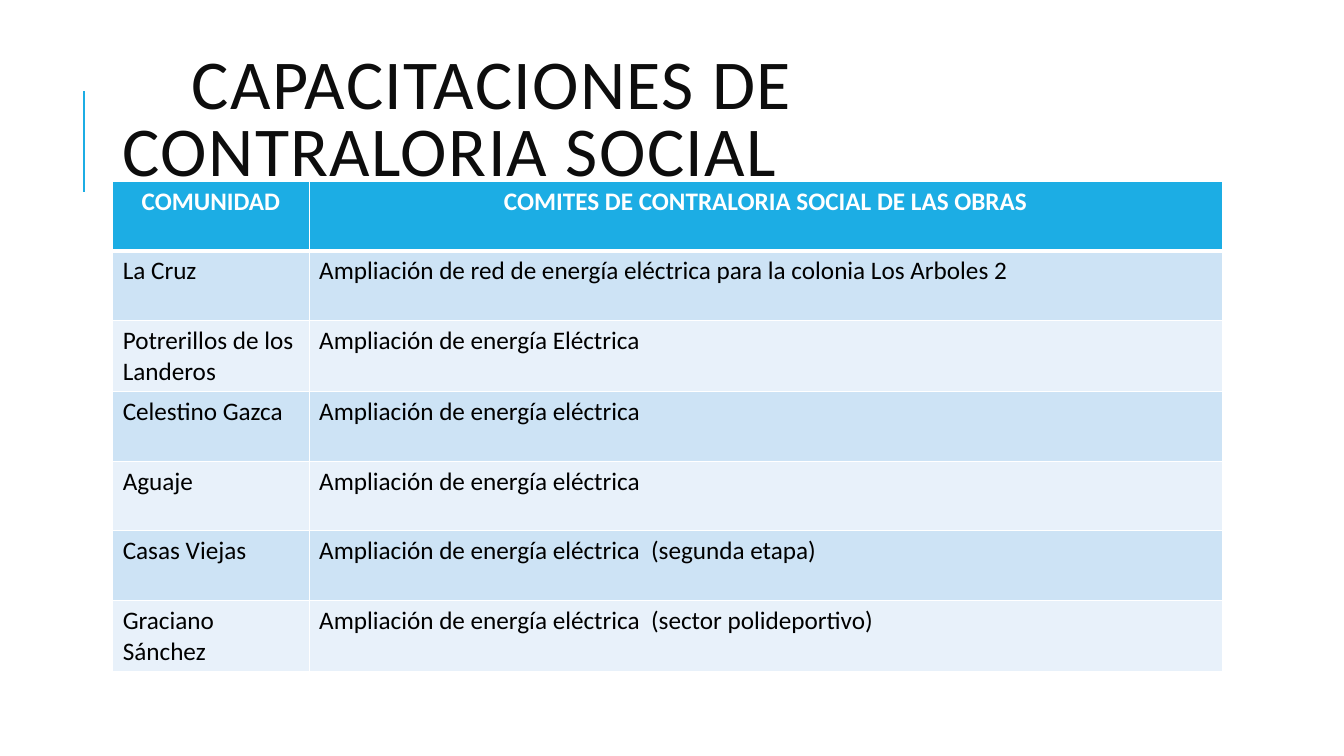
from lxml import etree
from pptx import Presentation, util as u
from pptx.dml.color import RGBColor
from pptx.enum import text
from pptx.oxml import ns

HUES = {"accent": "1CADE4", "title": "0D0D0D", "text": "000000",
        "white": "FFFFFF", "odd": "CDE3F5", "even": "E8F1FA"}
ALIGN = text.PP_ALIGN
HEAD = ["COMUNIDAD", "COMITES DE CONTRALORIA SOCIAL DE LAS OBRAS"]
WORK = "Ampliación de energía eléctrica"
ROWS = [
    ["La Cruz", "Ampliación de red de energía eléctrica para la colonia Los Arboles 2"],
    ["Potrerillos de los Landeros", "Ampliación de energía Eléctrica"],
    ["Celestino Gazca", WORK],
    ["Aguaje", WORK],
    ["Casas Viejas", WORK + "  (segunda etapa)"],
    ["Graciano Sánchez", WORK + "  (sector polideportivo)"],
]


def hue(name):
    return RGBColor.from_string(HUES[name])


class Deck:
    def __init__(self, wide, high):
        self.prs = Presentation()
        self.prs.slide_width, self.prs.slide_height = u.Cm(wide), u.Cm(high)
        self.face = "Calibri"

    def add(self):
        self.slide = self.prs.slides.add_slide(self.prs.slide_layouts[5])

    def label(self, para, words, color, **form):
        para.text = words
        font = para.runs[0].font
        for key, val in {"name": self.face, **form}.items():
            setattr(font, key, val)
        font.color.rgb = hue(color)

    def title(self, words, left, top, wide, high, indent):
        box = self.slide.shapes.title
        spot = {"left": left, "top": top, "width": wide, "height": high}
        for key, val in spot.items():
            setattr(box, key, u.Cm(val))
        frame = box.text_frame
        form = {"word_wrap": True, "auto_size": text.MSO_AUTO_SIZE.NONE,
                "vertical_anchor": text.MSO_ANCHOR.MIDDLE}
        for key, val in form.items():
            setattr(frame, key, val)
        para = frame.paragraphs[0]
        self.label(para, words, "title", size=u.Pt(50))
        para.alignment, para.line_spacing = ALIGN.LEFT, 0.8
        para._p.get_or_add_pPr().set("indent", str(u.Cm(indent)))
        para.runs[0]._r.get_or_add_rPr().set("spc", "100")

    def line(self, x1, y1, x2, y2):
        line = self.slide.shapes.add_connector(1, *map(u.Cm, (x1, y1, x2, y2)))
        line.line.color.rgb, line.line.width = hue("accent"), u.Pt(1.5)
        etree.SubElement(line._element.spPr, ns.qn("a:effectLst"))

    def edge(self, cell, **sides):
        """Draw white borders; sides maps L, R, T, B to points, in that order."""
        props = cell._tc.get_or_add_tcPr()
        for spot, (side, size) in enumerate(sides.items()):
            line = etree.Element(ns.qn("a:ln" + side), w=str(u.Pt(size)))
            fill = etree.SubElement(line, ns.qn("a:solidFill"))
            etree.SubElement(fill, ns.qn("a:srgbClr"), val=HUES["white"])
            props.insert(spot, line)

    def table(self, rows, left, top, cols, high):
        size = (left, top, sum(cols), high * len(rows))
        grid = self.slide.shapes.add_table(
            len(rows), len(cols), *map(u.Cm, size)).table
        for col, wide in zip(grid.columns, cols):
            col.width = u.Cm(wide)
        for r, row in enumerate(rows):
            grid.rows[r].height = u.Cm(high)
            head = r == 0
            fill = "accent" if head else "odd" if r % 2 else "even"
            for c, words in enumerate(row):
                cell = grid.cell(r, c)
                cell.fill.solid()
                cell.fill.fore_color.rgb = hue(fill)
                para = cell.text_frame.paragraphs[0]
                para.alignment = ALIGN.CENTER if head else ALIGN.LEFT
                self.label(para, words, "white" if head else "text",
                           size=u.Pt(18), bold=head)
                self.edge(cell, L=1, R=1, T=3 if r == 1 else 1, B=3 if head else 1)


def main():
    deck = Deck(33.87, 19.05)
    deck.add()
    deck.line(2.11, 4.83, 2.11, 2.29)
    deck.title("CAPACITACIONES DE CONTRALORIA SOCIAL", 2.84, 1.63, 27, 2.95, 1.74)
    deck.table([HEAD] + ROWS, 2.84, 4.57, [4.95, 23.01], 1.75)
    deck.prs.save("out.pptx")


if __name__ == "__main__":
    main()
